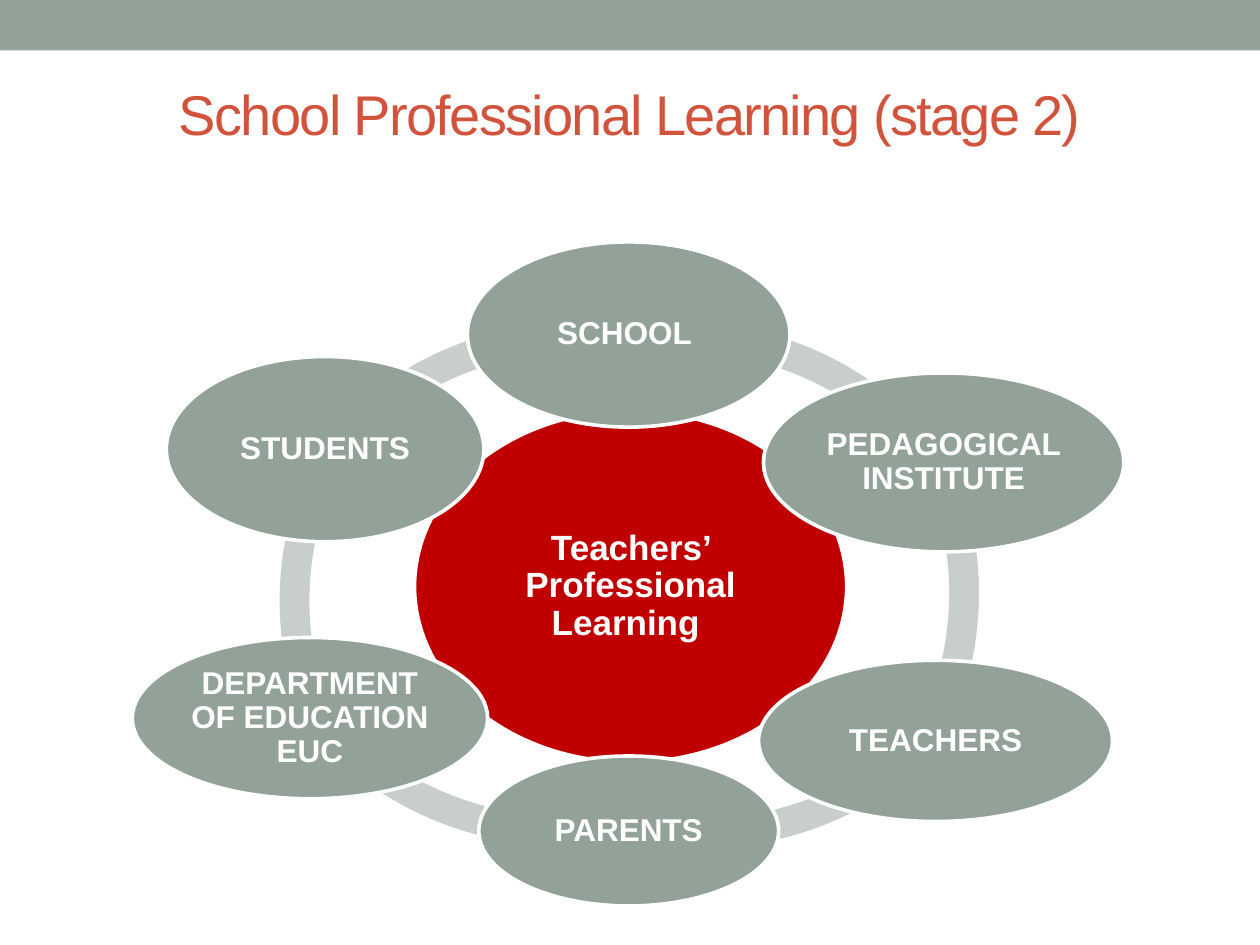
"""Build the slide on the parties around teachers' professional learning."""
from dataclasses import dataclass

import pptx
import pptx.dml.color
import pptx.enum.shapes
import pptx.enum.text
import pptx.util

SHAPE = pptx.enum.shapes.MSO_SHAPE
COLUMNS, ROWS = 100, 75
ARC_SIZE = 52.4
ARC_THICKNESS = 0.045
ADJUSTMENT_PER_DEGREE = 0.6

ARCS = [
    (19.5, 25.6, 219.17, 279.33),
    (22.2, 21.5, 158.74, 208.17),
    (18.3, 14.7, 77.92, 141.13),
    (29.6, 14.9, 43.93, 103.41),
    (25.3, 20.9, 336.16, 27.27),
    (28.0, 25.6, 260.31, 324.06),
]
PARTIES = [
    ("SCHOOL ", 37.1, 19.2, 25.6, 14.7),
    ("PEDAGOGICAL INSTITUTE", 60.6, 29.6, 28.6, 14.2),
    ("TEACHERS", 60.2, 52.4, 28.1, 12.8),
    ("PARENTS", 38.0, 60.0, 23.8, 11.9),
    ("DEPARTMENT OF EDUCATION EUC", 10.5, 50.6, 28.2, 12.8),
    ("STUDENTS", 13.2, 28.3, 25.2, 14.7),
]


@dataclass(frozen=True)
class Theme:
    """Hold the colours, font and type sizes of the slide."""
    sage: str = "93A299"
    pale: str = "C8CECA"
    red: str = "C00000"
    orange: str = "D2533C"
    white: str = "FFFFFF"
    font: str = "Arial"
    title: int = 32
    hub: int = 20
    party: int = 18
    outline: float = 2.08


THEME = Theme()


def rgb(value):
    """Turn a hex string into a colour."""
    return pptx.dml.color.RGBColor.from_string(value)


def grid_box(prs, column, row, columns, rows):
    """Turn grid cells into left, top, width and height."""
    w, h = prs.slide_width / COLUMNS, prs.slide_height / ROWS
    return [round(v) for v in (column * w, row * h, columns * w, rows * h)]


def add_filled(prs, s, kind, cells, color):
    """Add a flat shape without outline or shadow."""
    sp = s.shapes.add_shape(kind, *grid_box(prs, *cells))
    sp.shadow.inherit = False
    sp.fill.solid()
    sp.fill.fore_color.rgb = rgb(color)
    sp.line.fill.background()
    return sp


def set_text(tf, text, size, color, bold=False):
    """Write one centred paragraph and return its run."""
    tf.text = text
    tf.word_wrap = True
    tf.vertical_anchor = pptx.enum.text.MSO_ANCHOR.MIDDLE
    p = tf.paragraphs[0]
    p.alignment = pptx.enum.text.PP_ALIGN.CENTER
    r = p.runs[0]
    r.font.name = THEME.font
    r.font.size = pptx.util.Pt(size)
    r.font.bold = bold
    r.font.color.rgb = rgb(color)
    return r


def add_title(prs, s, text):
    """Place and format the title placeholder."""
    sp = s.shapes.title
    sp.left, sp.top, sp.width, sp.height = grid_box(prs, 5, 3.6, 90, 10.8)
    r = set_text(sp.text_frame, text, THEME.title, THEME.orange)
    r.font._element.set("spc", "-100")


def add_arc(prs, s, column, row, start, end):
    """Add one ring segment between two angles in degrees."""
    cells = (column, row, ARC_SIZE, ARC_SIZE)
    sp = add_filled(prs, s, SHAPE.BLOCK_ARC, cells, THEME.pale)
    sp.adjustments[0] = start * ADJUSTMENT_PER_DEGREE
    sp.adjustments[1] = end * ADJUSTMENT_PER_DEGREE
    sp.adjustments[2] = ARC_THICKNESS


def add_ellipse(prs, s, text, cells, color, size):
    """Add a white-edged ellipse with a bold label."""
    sp = add_filled(prs, s, SHAPE.OVAL, cells, color)
    sp.line.color.rgb = rgb(THEME.white)
    sp.line.width = pptx.util.Pt(THEME.outline)
    tf = sp.text_frame
    inset = pptx.util.Inches(0.03)
    tf.margin_left = tf.margin_right = tf.margin_top = tf.margin_bottom = inset
    set_text(tf, text, size, THEME.white, bold=True)
    tf.paragraphs[0].line_spacing = 0.9


def main():
    """Build and save the slide."""
    prs = pptx.Presentation()
    prs.slide_width = pptx.util.Inches(10)
    prs.slide_height = pptx.util.Inches(7.5)
    s = prs.slides.add_slide(prs.slide_layouts[5])
    add_filled(prs, s, SHAPE.RECTANGLE, (0, 0, COLUMNS, 4), THEME.sage)
    add_title(prs, s, "School Professional Learning (stage 2)")
    for arc in ARCS:
        add_arc(prs, s, *arc)
    add_ellipse(prs, s, "Teachers’ Professional Learning ",
                (32.9, 32.6, 34.3, 27.9), THEME.red, THEME.hub)
    for text, *cells in PARTIES:
        add_ellipse(prs, s, text, cells, THEME.sage, THEME.party)
    prs.save("out.pptx")


if __name__ == "__main__":
    main()
